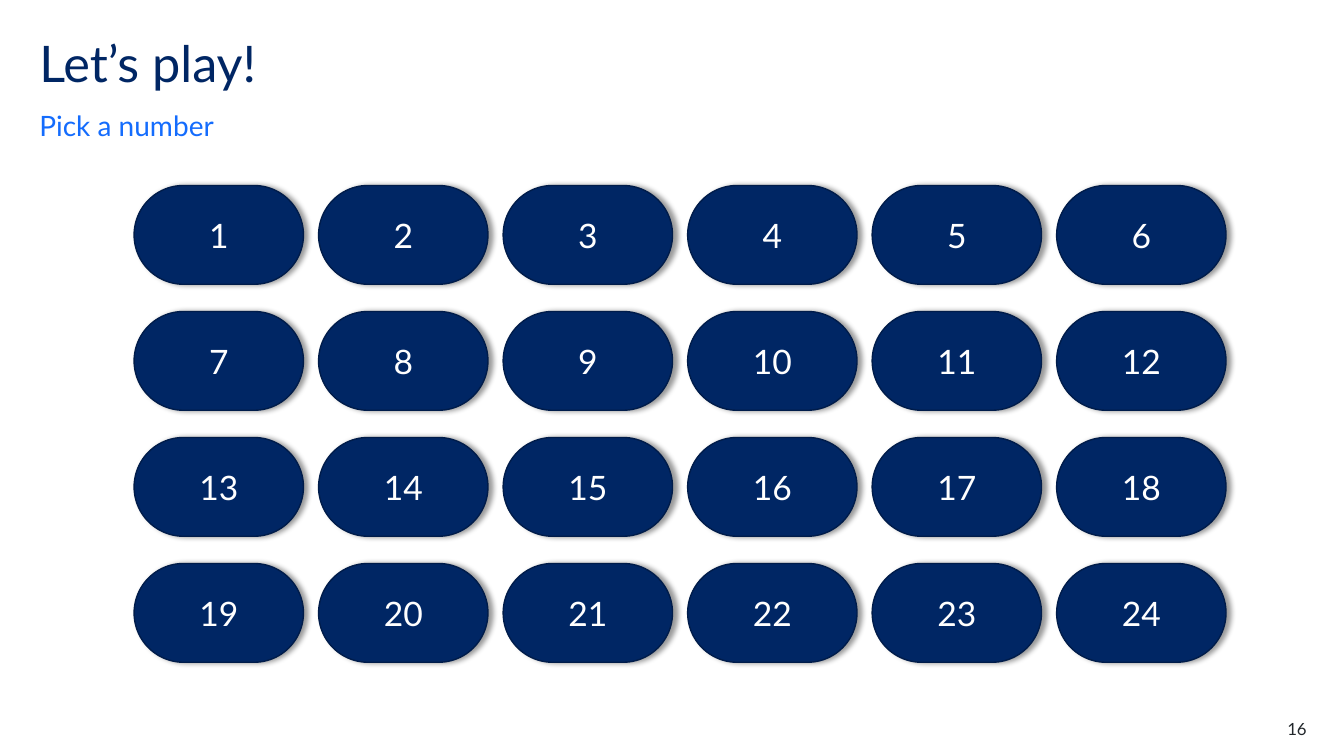
from dataclasses import dataclass

from lxml import etree
from pptx import Presentation
from pptx.dml.color import RGBColor
from pptx.enum import shapes, text
from pptx.oxml import ns
from pptx.shapes.autoshape import Shape
from pptx.slide import Slide
from pptx.util import Inches, Pt

COLORS = {
    "navy": "002664",
    "navy_edge": "001C4A",
    "blue": "146CFD",
    "white": "FFFFFF",
    "ink": "22272B",
    "shadow": "000000",
}
FONT = "Lato"
COLUMNS, ROWS = 6, 4
GRID_LEFT, GRID_TOP = 1.33, 1.84
COLUMN_STEP, ROW_STEP = 1.83, 1.25
BUTTON_WIDTH, BUTTON_HEIGHT = 1.68, 0.98


@dataclass(frozen=True)
class Box:
    left: float
    top: float
    width: float
    height: float

    def emu(self) -> list[int]:
        return [Inches(side) for side in (self.left, self.top, self.width, self.height)]


@dataclass(frozen=True)
class NumberButton:
    number: int
    box: Box


def rgb(name: str) -> RGBColor:
    return RGBColor.from_string(COLORS[name])


def write(shape: Shape, words: str, *, size: float, color: str,
          align: text.PP_ALIGN = text.PP_ALIGN.LEFT,
          anchor: text.MSO_ANCHOR = text.MSO_ANCHOR.TOP,
          line_spacing: float = 1.0, space_after: float = 0, margin: float = 0) -> None:
    frame = shape.text_frame
    frame.word_wrap = True
    frame.vertical_anchor = anchor
    frame.margin_left = frame.margin_right = Inches(margin)
    frame.margin_top = frame.margin_bottom = Inches(margin / 2)
    paragraph = frame.paragraphs[0]
    paragraph.alignment = align
    paragraph.line_spacing = line_spacing
    paragraph.space_after = Pt(space_after)
    run = paragraph.add_run()
    run.text = words
    run.font.name = FONT
    run.font.size = Pt(size)
    run.font.color.rgb = rgb(color)


def cast_shadow(shape: Shape, *, blur: float, distance: float, opacity: int) -> None:
    """Give the shape an outer shadow falling to the right."""
    shape.shadow.inherit = False
    effects = shape.element.spPr.find(ns.qn("a:effectLst"))
    outer = etree.SubElement(effects, ns.qn("a:outerShdw"), blurRad=str(Pt(blur)),
                             dist=str(Pt(distance)), dir="0", algn="l", rotWithShape="0")
    tint = etree.SubElement(outer, ns.qn("a:srgbClr"), val=COLORS["shadow"])
    etree.SubElement(tint, ns.qn("a:alpha"), val=str(opacity * 1000))


def draw_button(slide: Slide, button: NumberButton) -> None:
    pill = slide.shapes.add_shape(shapes.MSO_SHAPE.ROUNDED_RECTANGLE, *button.box.emu())
    pill.adjustments[0] = 0.5
    pill.fill.solid()
    pill.fill.fore_color.rgb = rgb("navy")
    pill.line.color.rgb = rgb("navy_edge")
    pill.line.width = Pt(1)
    cast_shadow(pill, blur=4, distance=3, opacity=40)
    write(pill, str(button.number), size=24, color="white", margin=0.1,
          align=text.PP_ALIGN.CENTER, anchor=text.MSO_ANCHOR.MIDDLE)


def number_buttons() -> list[NumberButton]:
    return [
        NumberButton(row * COLUMNS + column + 1,
                     Box(GRID_LEFT + column * COLUMN_STEP, GRID_TOP + row * ROW_STEP,
                         BUTTON_WIDTH, BUTTON_HEIGHT))
        for row in range(ROWS) for column in range(COLUMNS)
    ]


def main() -> None:
    deck = Presentation()
    deck.slide_width, deck.slide_height = Inches(13.33), Inches(7.5)
    slide = deck.slides.add_slide(deck.slide_layouts[6])

    title = slide.shapes.add_textbox(*Box(0.39, 0.39, 11.02, 0.6).emu())
    write(title, "Let’s play!", size=36, color="navy", line_spacing=0.9)
    prompt = slide.shapes.add_textbox(*Box(0.39, 1.07, 11.02, 0.34).emu())
    write(prompt, "Pick a number", size=20, color="blue", line_spacing=1.5,
          space_after=12, anchor=text.MSO_ANCHOR.BOTTOM)

    for button in number_buttons():
        draw_button(slide, button)

    page_number = slide.shapes.add_textbox(*Box(12.17, 7.13, 0.79, 0.2).emu())
    write(page_number, "16", size=12, color="ink", align=text.PP_ALIGN.RIGHT)

    deck.save("out.pptx")


if __name__ == "__main__":
    main()
